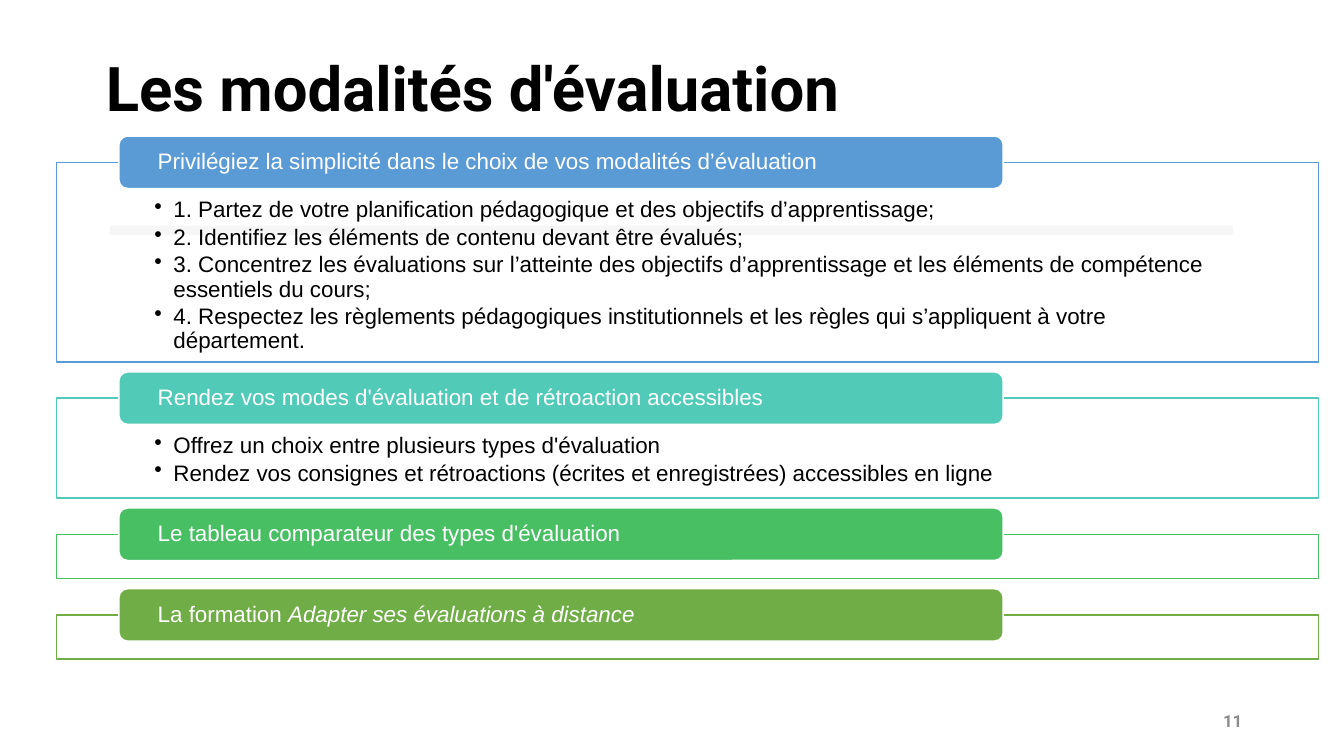
"""Build the slide on evaluation methods: a title and four headed frames."""
from lxml.etree import SubElement
from pptx import Presentation
from pptx.dml.color import RGBColor
from pptx.enum.shapes import MSO_SHAPE as SHAPE
from pptx.enum.text import MSO_ANCHOR as ANCHOR, PP_ALIGN as ALIGN
from pptx.oxml.ns import qn
from pptx.util import Inches, Pt


def add_box(kind, left, top, width, height, fill, line=None, opacity=100):
    s = slide.shapes.add_shape(kind, Inches(left), Inches(top), Inches(width), Inches(height))
    s.shadow.inherit = False
    s.fill.solid()
    s.fill.fore_color.rgb = RGBColor.from_string(fill)
    if opacity < 100:
        color = s.fill._xPr.find(qn("a:solidFill"))[0]
        SubElement(color, qn("a:alpha")).set("val", str(opacity * 1000))
    if line:
        s.line.color.rgb = RGBColor.from_string(line)
        s.line.width = Pt(1)
    else:
        s.line.fill.background()
    return s


def add_run(p, text, size, font, color, bold=False, italic=False):
    r = p.add_run()
    r.text = text
    r.font.size = Pt(size)
    r.font.name = font
    r.font.color.rgb = RGBColor.from_string(color)
    r.font.bold = bold
    r.font.italic = italic


prs = Presentation()
prs.slide_width, prs.slide_height = Inches(13.33), Inches(7.5)
slide = prs.slides.add_slide(prs.slide_layouts[5])

title = slide.shapes.title
title.left, title.top = Inches(0.95), Inches(0.18)
title.width, title.height = Inches(11.43), Inches(1.45)
tf = title.text_frame
tf.vertical_anchor = ANCHOR.MIDDLE
p = tf.paragraphs[0]
p.alignment = ALIGN.LEFT
p.line_spacing = 0.9
add_run(p, "Les modalités d'évaluation", 44, "Roboto", "000000", bold=True)

add_box(SHAPE.RECTANGLE, 1.09, 2.24, 11.14, 0.09, "808080", opacity=65)

number = slide.shapes.add_textbox(Inches(9.42), Inches(6.95), Inches(3), Inches(0.4))
tf = number.text_frame
tf.word_wrap = True
tf.vertical_anchor = ANCHOR.MIDDLE
p = tf.paragraphs[0]
p.alignment = ALIGN.RIGHT
p.space_after = Pt(6)
add_run(p, "11", 12, "Roboto", "8C8C8C", bold=True)

sections = [
    ("5B9BD5", 1.98, [("Privilégiez la simplicité dans le choix de vos modalités d’évaluation", False)], [
        "1. Partez de votre planification pédagogique et des objectifs d’apprentissage;",
        "2. Identifiez les éléments de contenu devant être évalués;",
        "3. Concentrez les évaluations sur l’atteinte des objectifs d’apprentissage "
        "et les éléments de compétence essentiels du cours;",
        "4. Respectez les règlements pédagogiques institutionnels "
        "et les règles qui s’appliquent à votre département.",
    ]),
    ("52CAB8", 0.99, [("Rendez vos modes d'évaluation et de rétroaction accessibles ", False)], [
        "Offrez un choix entre plusieurs types d'évaluation",
        "Rendez vos consignes et rétroactions (écrites et enregistrées) accessibles en ligne",
    ]),
    ("49BF64", 0.44, [("Le tableau comparateur des types d'évaluation", False)], []),
    ("70AD47", 0.44, [("La formation ", False), ("Adapter ses évaluations à distance", True)], []),
]

top = 1.61
for color, height, heading, bullets in sections:
    frame = add_box(SHAPE.RECTANGLE, 0.56, top, 12.52, height, "FFFFFF", color, 90)
    tf = frame.text_frame
    tf.word_wrap = True
    tf.vertical_anchor = ANCHOR.TOP
    tf.margin_left = tf.margin_right = Inches(0.97)
    tf.margin_top, tf.margin_bottom = Inches(0.36), Inches(0.12)
    for i, text in enumerate(bullets):
        p = tf.add_paragraph() if i else tf.paragraphs[0]
        p.level = 1
        pPr = p._p.get_or_add_pPr()
        pPr.set("marL", str(Inches(0.19)))
        pPr.set("indent", str(Inches(-0.19)))
        SubElement(pPr, qn("a:buChar")).set("char", "•")
        p.alignment = ALIGN.LEFT
        p.line_spacing = 0.9
        p.space_after = Pt(2.4)
        add_run(p, text, 16, "Arial", "000000")

    header = add_box(SHAPE.ROUNDED_RECTANGLE, 1.18, top - 0.26, 8.77, 0.52, color, "FFFFFF")
    tf = header.text_frame
    tf.word_wrap = True
    tf.vertical_anchor = ANCHOR.MIDDLE
    tf.margin_left = tf.margin_right = Inches(0.36)
    tf.margin_top = tf.margin_bottom = 0
    p = tf.paragraphs[0]
    p.alignment = ALIGN.LEFT
    p.line_spacing = 0.9
    for text, italic in heading:
        add_run(p, text, 16, "Arial", "FFFFFF", italic=italic)
    top += height + 0.36

prs.save("out.pptx")
